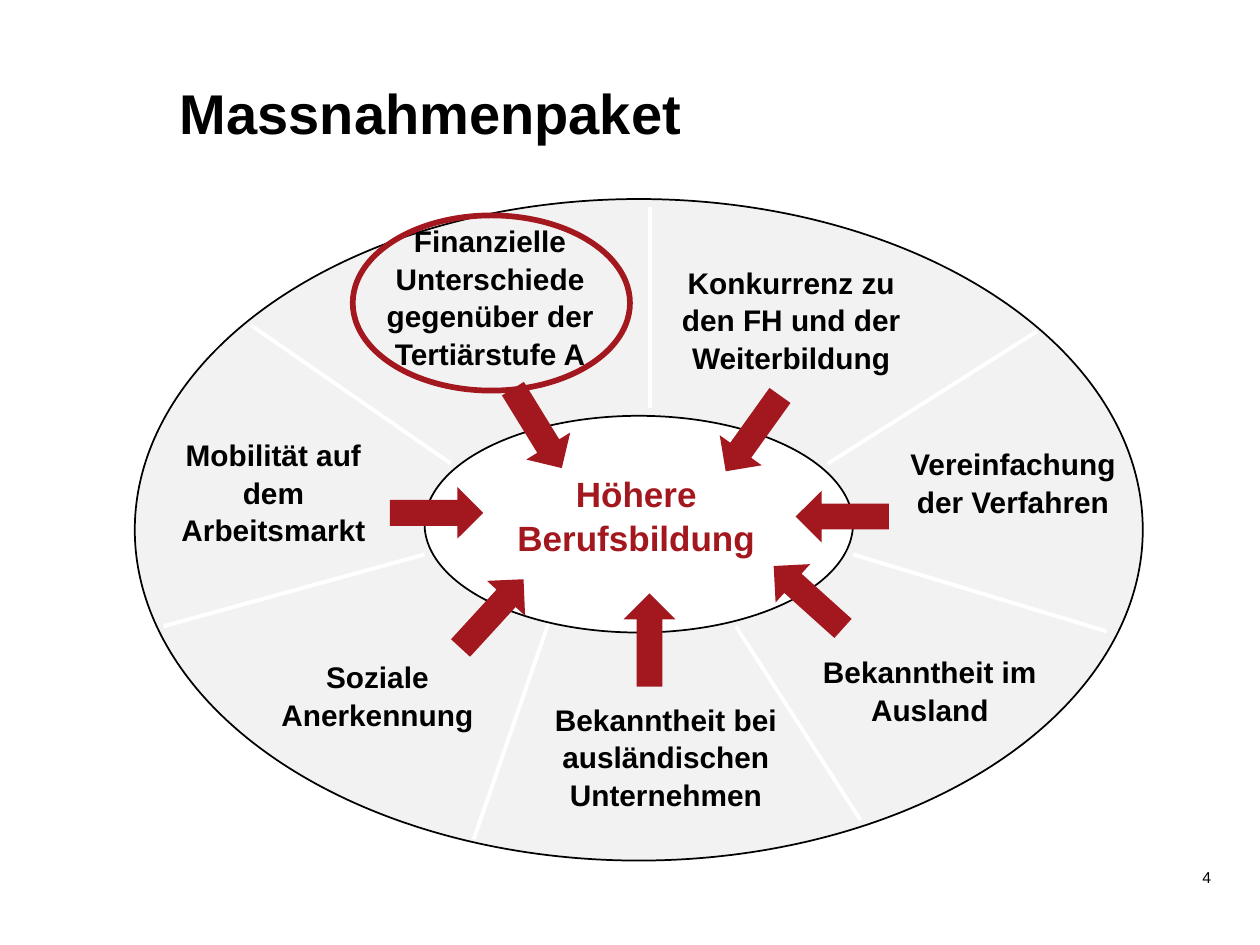
from dataclasses import dataclass

from lxml import etree
from pptx import Presentation
from pptx.dml.color import RGBColor
from pptx.enum.shapes import MSO_CONNECTOR, MSO_SHAPE
from pptx.enum.text import MSO_ANCHOR, MSO_AUTO_SIZE, PP_ALIGN
from pptx.oxml.ns import qn
from pptx.util import Inches, Pt

OVAL, DOWN_ARROW = MSO_SHAPE.OVAL, MSO_SHAPE.DOWN_ARROW
STRAIGHT = MSO_CONNECTOR.STRAIGHT
TOP, MIDDLE = MSO_ANCHOR.TOP, MSO_ANCHOR.MIDDLE
LEFT, CENTER, RIGHT = PP_ALIGN.LEFT, PP_ALIGN.CENTER, PP_ALIGN.RIGHT
NO_FIT, GROW = MSO_AUTO_SIZE.NONE, MSO_AUTO_SIZE.SHAPE_TO_FIT_TEXT


@dataclass(frozen=True)
class Theme:
    black: str = "000000"
    white: str = "FFFFFF"
    ring: str = "F2F2F2"
    red: str = "A3171E"
    font: str = "Arial"
    title: float = 32
    core: float = 20
    label: float = 17
    number: float = 9
    outline: float = 1
    divider: float = 2.25
    highlight: float = 3.25
    spacing: float = 1.05


class SlideBuilder:
    def __init__(self, slide, theme):
        self.shapes = slide.shapes
        self.theme = theme

    def shape(self, kind, box, fill=None, line=None, width=1, rotation=0):
        item = self.shapes.add_shape(kind, *map(Inches, box))
        item.shadow.inherit = False
        item.rotation = rotation
        if fill:
            item.fill.solid()
            item.fill.fore_color.rgb = RGBColor.from_string(fill)
        else:
            item.fill.background()
        if line:
            item.line.color.rgb = RGBColor.from_string(line)
            item.line.width = Pt(width)
        else:
            item.line.fill.background()

    def divider(self, start, end):
        line = self.shapes.add_connector(STRAIGHT, *map(Inches, start + end))
        line.line.color.rgb = RGBColor.from_string(self.theme.white)
        line.line.width = Pt(self.theme.divider)
        etree.SubElement(line._element.spPr, qn("a:effectLst"))

    def text(self, words, box, size, color, align, spacing, bold=True, frame_format=None):
        frame = self.shapes.add_textbox(*map(Inches, box)).text_frame
        frame_values = {"word_wrap": True, "auto_size": NO_FIT, "vertical_anchor": TOP}
        for name, value in {**frame_values, **(frame_format or {})}.items():
            setattr(frame, name, value)
        paragraph = frame.paragraphs[0]
        paragraph.text = words
        paragraph.alignment = align
        paragraph.line_spacing = spacing
        font_values = {"name": self.theme.font, "size": Pt(size), "bold": bold}
        for name, value in font_values.items():
            setattr(paragraph.font, name, value)
        paragraph.font.color.rgb = RGBColor.from_string(color)

    def label(self, words, box, size, color):
        frame_format = {"margin_left": 0, "margin_right": 0, "margin_top": 0,
                        "margin_bottom": 0, "vertical_anchor": MIDDLE, "auto_size": GROW}
        self.text(words, box, size, color, CENTER, self.theme.spacing,
                  frame_format=frame_format)

    def arrow(self, left, top, rotation):
        self.shape(DOWN_ARROW, (left, top, 0.41, 0.74), self.theme.red, rotation=rotation)


DIVIDERS = [
    ((4.39, 4.84), (3.76, 6.66)),
    ((5.84, 4.97), (6.83, 6.51)),
    ((1.3, 4.97), (3.37, 4.4)),
    ((6.77, 4.4), (8.78, 5.01)),
    ((6.57, 3.68), (8.23, 2.63)),
    ((5.16, 3.24), (5.16, 1.64)),
    ((1.99, 2.58), (3.58, 3.68)),
]

# Measure, its box, and its arrow (left, top, rotation)
MEASURES = [
    ("Finanzielle Unterschiede gegenüber der Tertiärstufe A",
     (2.92, 1.78, 1.94, 1.14), (4.06, 3.03, 328.4)),
    ("Konkurrenz zu den FH und der Weiterbildung",
     (5.31, 2.1, 1.94, 0.86), (5.77, 3.07, 35.6)),
    ("Vereinfachung der Verfahren",
     (7.07, 3.54, 1.94, 0.57), (6.48, 3.73, 90)),
    ("Bekanntheit im Ausland",
     (6.41, 5.19, 1.94, 0.57), (6.21, 4.37, 132)),
    ("Bekanntheit bei ausländischen Unternehmen",
     (4.36, 5.57, 1.85, 0.86), (4.95, 4.71, 180)),
    ("Soziale Anerkennung",
     (1.99, 5.23, 2.01, 0.57), (3.7, 4.5, 222.5)),
    ("Mobilität auf dem Arbeitsmarkt",
     (1.21, 3.47, 1.92, 0.86), (3.26, 3.7, 270)),
]


def main():
    presentation = Presentation()
    presentation.slide_width = Inches(10)
    presentation.slide_height = Inches(7.5)
    theme = Theme()
    builder = SlideBuilder(
        presentation.slides.add_slide(presentation.slide_layouts[6]), theme)

    # Title and page number
    builder.text("Massnahmenpaket", (1.33, 0.55, 8.4, 0.78), theme.title,
                 theme.black, LEFT, theme.spacing)
    builder.text("4", (7.27, 6.82, 2.44, 0.4), theme.number, theme.black,
                 RIGHT, Pt(12), bold=False)

    # Ring with its sectors, and the core
    builder.shape(OVAL, (1.07, 1.58, 8, 5.25), theme.ring, theme.black, theme.outline)
    for start, end in DIVIDERS:
        builder.divider(start, end)
    builder.shape(OVAL, (3.37, 3.3, 3.4, 1.72), theme.white, theme.black, theme.outline)
    builder.label("Höhere Berufsbildung", (3.76, 3.75, 2.58, 0.67), theme.core, theme.red)

    # Measures pointing at the core
    for words, box, arrow in MEASURES:
        builder.label(words, box, theme.label, theme.black)
        builder.arrow(*arrow)

    # Highlight around the financial measure
    builder.shape(OVAL, (2.8, 1.71, 2.2, 1.39), line=theme.red, width=theme.highlight)

    presentation.save("out.pptx")


if __name__ == "__main__":
    main()
